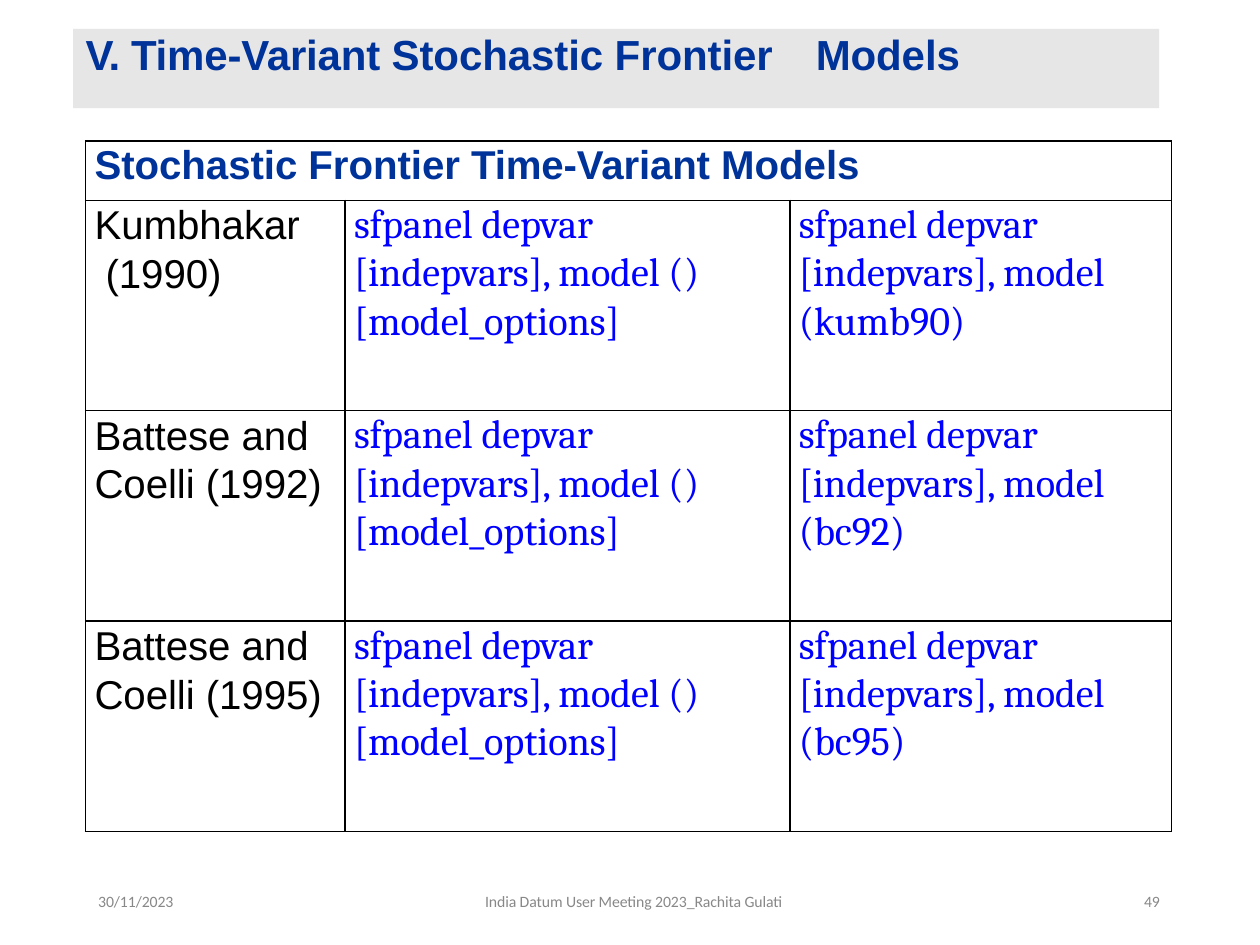
from lxml import etree
from pptx import Presentation
from pptx.dml.color import RGBColor
from pptx.enum import shapes, text
from pptx.oxml import ns
from pptx.util import Inches, Pt

NAVY = RGBColor(0x00, 0x33, 0x99)
BLUE = RGBColor(0x00, 0x00, 0xFF)
BLACK = RGBColor(0x00, 0x00, 0x00)
GREY = RGBColor(0x88, 0x88, 0x88)
PALE = RGBColor(0xE7, 0xE6, 0xE6)

TITLE = [("V. ", -0.6), ("Time-Variant ", -0.1), ("Stochastic Frontier", -0.05),
         (" ", 18), ("Models", -0.05)]
HEADING = [("Stochastic Frontier", -0.05), (" Time-Variant ", -0.1), ("Models", -0.05)]
MODELS = [
    (["Kumbhakar", " (1990)"], "kumb90"),
    (["Battese and", "Coelli (1992)"], "bc92"),
    (["Battese and", "Coelli (1995)"], "bc95"),
]
FOOTER = [
    ("30/11/2023", 0.77, 0.8, 0.01),
    ("India Datum User Meeting 2023_Rachita Gulati", 3.84, 2.8, 0.01),
    ("49", 9.04, 0.21, 0.04),
]
COLUMNS = [2.06, 3.53, 3.03]
ROWS = [0.47, 1.67, 1.67, 1.67]


def clear_margins(holder):
    holder.margin_left = holder.margin_right = 0
    holder.margin_top = holder.margin_bottom = 0


def add_run(paragraph, content, font_name, size, color, bold=False, spacing=-0.05):
    run = paragraph.add_run()
    run.text = content
    run.font.name = font_name
    run.font.size = Pt(size)
    run.font.bold = bold
    run.font.color.rgb = color
    run.font._element.set("spc", str(round(spacing * 100)))


def indent(paragraph, inches):
    properties = paragraph._p.get_or_add_pPr()
    properties.set("marL", str(Inches(inches)))
    properties.set("indent", "0")


def add_borders(cell):
    properties = cell._tc.get_or_add_tcPr()
    for position, side in enumerate(("lnL", "lnR", "lnT", "lnB")):
        line = etree.Element(ns.qn(f"a:{side}"), w=str(Pt(1)))
        fill = etree.SubElement(line, ns.qn("a:solidFill"))
        etree.SubElement(fill, ns.qn("a:srgbClr"), val=str(BLACK))
        properties.insert(position, line)


def fill_cell(cell, lines, font_name, color, space_before):
    paragraph = cell.text_frame.paragraphs[0]
    indent(paragraph, 0.07)
    paragraph.line_spacing = Pt(27.6)
    paragraph.space_before = Pt(space_before)
    for number, line in enumerate(lines):
        if number:
            paragraph.add_line_break()
        add_run(paragraph, line, font_name, 23, color)


def add_footer(slide):
    for content, left, width, margin in FOOTER:
        box = slide.shapes.add_textbox(Inches(left), Inches(7.09), Inches(width), Inches(0.15))
        clear_margins(box.text_frame)
        box.text_frame.word_wrap = True
        paragraph = box.text_frame.paragraphs[0]
        indent(paragraph, margin)
        paragraph.line_spacing = Pt(9.6)
        add_run(paragraph, content, "Calibri", 9, GREY)


def add_models_table(slide):
    frame = slide.shapes.add_table(len(ROWS), len(COLUMNS), Inches(0.68), Inches(1.12),
                                   Inches(sum(COLUMNS)), Inches(sum(ROWS)))
    table = frame.table
    for column, width in zip(table.columns, COLUMNS):
        column.width = Inches(width)
    for row, height in zip(table.rows, ROWS):
        row.height = Inches(height)
    for cell in table.iter_cells():
        clear_margins(cell)
        cell.fill.background()
        add_borders(cell)

    heading = table.cell(0, 0)
    heading.merge(table.cell(0, 2))
    paragraph = heading.text_frame.paragraphs[0]
    indent(paragraph, 0.07)
    paragraph.line_spacing = Pt(27)
    for content, spacing in HEADING:
        add_run(paragraph, content, "Arial", 23, NAVY, True, spacing)

    for row, (authors, option) in enumerate(MODELS, 1):
        fill_cell(table.cell(row, 0), authors, "Arial", BLACK, 0.3)
        syntax = ["sfpanel depvar", "[indepvars], model ()", "[model_options]"]
        fill_cell(table.cell(row, 1), syntax, "Cambria", BLUE, 0.1)
        command = ["sfpanel depvar", "[indepvars], model", f"({option})"]
        fill_cell(table.cell(row, 2), command, "Cambria", BLUE, 0.1)


def add_title(slide):
    banner = slide.shapes.add_shape(shapes.MSO_SHAPE.RECTANGLE, Inches(0.58), Inches(0.23),
                                    Inches(8.62), Inches(0.63))
    banner.shadow.inherit = False
    banner.fill.solid()
    banner.fill.fore_color.rgb = PALE
    banner.line.fill.background()
    clear_margins(banner.text_frame)
    banner.text_frame.word_wrap = True
    banner.text_frame.vertical_anchor = text.MSO_ANCHOR.TOP
    paragraph = banner.text_frame.paragraphs[0]
    paragraph.alignment = text.PP_ALIGN.LEFT
    paragraph.space_before = Pt(0.1)
    indent(paragraph, 0.1)
    for content, spacing in TITLE:
        add_run(paragraph, content, "Arial", 24, NAVY, True, spacing)


def main():
    presentation = Presentation()
    presentation.slide_width = Inches(10)
    presentation.slide_height = Inches(7.5)
    slide = presentation.slides.add_slide(presentation.slide_layouts[6])
    add_footer(slide)
    add_models_table(slide)
    add_title(slide)
    presentation.save("out.pptx")


if __name__ == "__main__":
    main()
